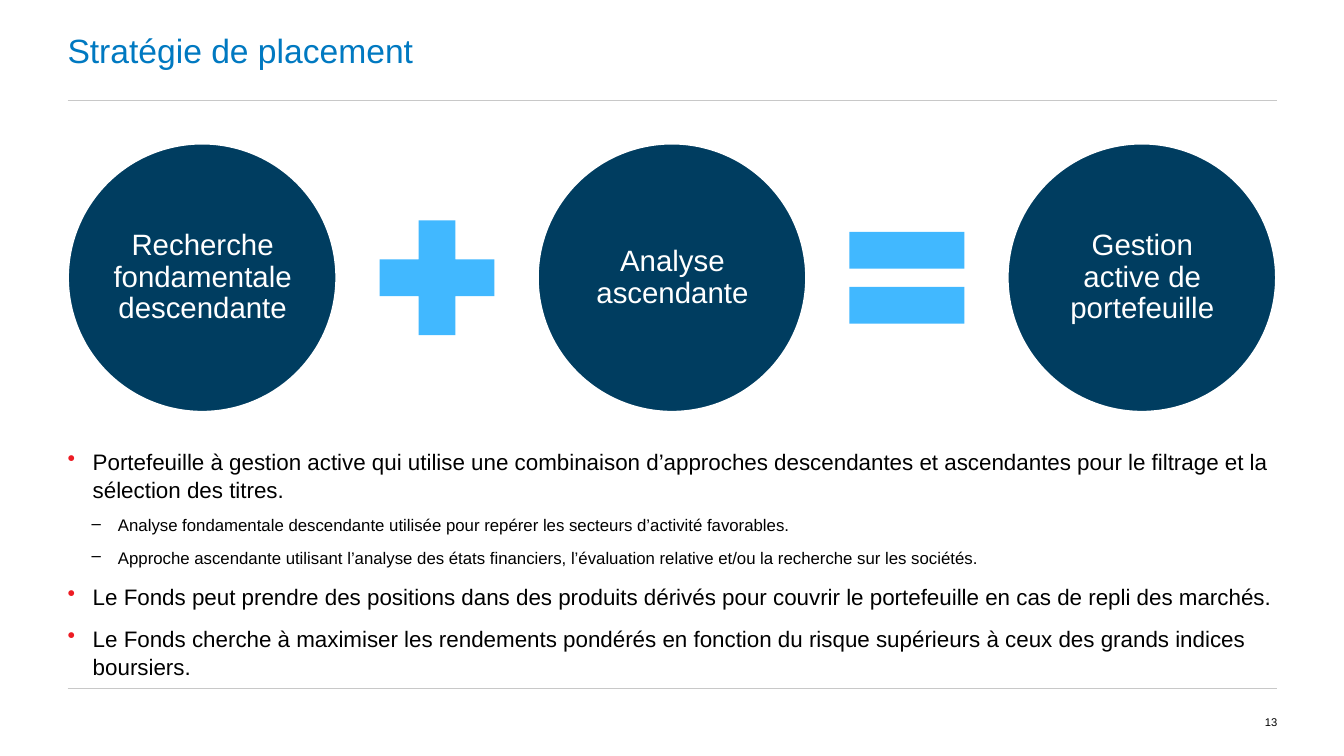
from pptx import Presentation
from pptx.dml.color import RGBColor
from pptx.enum.shapes import MSO_CONNECTOR, MSO_SHAPE
from pptx.enum.text import MSO_ANCHOR, PP_ALIGN
from pptx.oxml.ns import qn
from pptx.util import Inches, Pt
from lxml import etree

LINE = MSO_CONNECTOR.STRAIGHT
OVAL, PLUS, EQUAL = MSO_SHAPE.OVAL, MSO_SHAPE.MATH_PLUS, MSO_SHAPE.MATH_EQUAL
TOP, MIDDLE = MSO_ANCHOR.TOP, MSO_ANCHOR.MIDDLE
LEFT, CENTER, RIGHT = PP_ALIGN.LEFT, PP_ALIGN.CENTER, PP_ALIGN.RIGHT
MARGIN, WIDTH = 0.67, 12


def color(value):
    return RGBColor.from_string(value)


def add_text(x, y, w, h, paragraphs, size, fill="000000", align=LEFT, anchor=MIDDLE):
    tf = s.shapes.add_textbox(Inches(x), Inches(y), Inches(w), Inches(h)).text_frame
    tf.word_wrap = True
    tf.vertical_anchor = anchor
    tf.margin_left = tf.margin_right = tf.margin_top = tf.margin_bottom = 0
    tf.text = "\n".join(paragraphs)
    for p in tf.paragraphs:
        p.alignment = align
        p.font.name = "Arial"
        p.font.size = Pt(size)
        p.font.color.rgb = color(fill)
    return tf


prs = Presentation()
prs.slide_width, prs.slide_height = Inches(13.33), Inches(7.5)
s = prs.slides.add_slide(prs.slide_layouts[6])

for y in (1, 6.83):
    rule = s.shapes.add_connector(LINE, Inches(MARGIN), Inches(y), Inches(MARGIN + WIDTH), Inches(y))
    rule.line.color.rgb = color("C8C8C8")
    rule.line.width = Pt(0.75)
    etree.SubElement(rule._element.spPr, qn("a:effectLst"))

add_text(MARGIN, 0, WIDTH, 1, ["Stratégie de placement"], 24, "0079C1")

diameter, pitch, circle_top = 2.67, 4.66, 1.42
circles = ["Recherche fondamentale descendante", "Analyse ascendante", "Gestion active de portefeuille"]
for i, label in enumerate(circles):
    sp = s.shapes.add_shape(OVAL, Inches(MARGIN + i * pitch), Inches(circle_top), Inches(diameter), Inches(diameter))
    sp.shadow.inherit = False
    sp.fill.solid()
    sp.fill.fore_color.rgb = color("003D60")
    sp.line.color.rgb = color("FFFFFF")
    sp.line.width = Pt(2)
    tf = sp.text_frame
    tf.word_wrap = True
    tf.vertical_anchor = MIDDLE
    tf.margin_left = tf.margin_top = tf.margin_bottom = Inches(0.03)
    tf.margin_right = Inches(0.02)
    p = tf.paragraphs[0]
    p.text = label
    p.alignment = CENTER
    p.line_spacing = 0.9
    p.font.name = "Arial"
    p.font.size = Pt(21)
    p.font.color.rgb = color("FFFFFF")

sign = 1.55
sign_left = MARGIN + (diameter + pitch - sign) / 2
sign_top = circle_top + (diameter - sign) / 2
for i, kind in enumerate((PLUS, EQUAL)):
    sp = s.shapes.add_shape(kind, Inches(sign_left + i * pitch), Inches(sign_top), Inches(sign), Inches(sign))
    sp.shadow.inherit = False
    sp.fill.solid()
    sp.fill.fore_color.rgb = color("41B8FF")
    sp.line.fill.background()

bullets = [
    (0, "Portefeuille à gestion active qui utilise une combinaison d’approches descendantes et ascendantes pour le filtrage et la sélection des titres."),
    (1, "Analyse fondamentale descendante utilisée pour repérer les secteurs d’activité favorables."),
    (1, "Approche ascendante utilisant l’analyse des états financiers, l’évaluation relative et/ou la recherche sur les sociétés."),
    (0, "Le Fonds peut prendre des positions dans des produits dérivés pour couvrir le portefeuille en cas de repli des marchés."),
    (0, "Le Fonds cherche à maximiser les rendements pondérés en fonction du risque supérieurs à ceux des grands indices boursiers."),
]
styles = [("•", "ED1C24", 16, 10, 0.25, -0.25), ("–", "000000", 12, 8, 0.5, -0.26)]
tf = add_text(MARGIN, 4.43, WIDTH, 2.26, [text for level, text in bullets], 16, anchor=TOP)
for i, (p, (level, text)) in enumerate(zip(tf.paragraphs, bullets)):
    mark, mark_color, size, before, left, indent = styles[level]
    p.level = level
    p.line_spacing = 1.05
    p.space_before = Pt(before if i else 0)
    p.font.size = Pt(size)
    pPr = p._p.get_or_add_pPr()
    pPr.set("marL", str(Inches(left)))
    pPr.set("indent", str(Inches(indent)))
    buClr = etree.Element(qn("a:buClr"))
    etree.SubElement(buClr, qn("a:srgbClr"), val=mark_color)
    buChar = etree.Element(qn("a:buChar"), char=mark)
    defRPr = pPr.find(qn("a:defRPr"))
    defRPr.addprevious(buClr)
    defRPr.addprevious(buChar)

add_text(12, 6.83, 0.67, 0.67, ["13"], 8, align=RIGHT)

prs.save("out.pptx")
